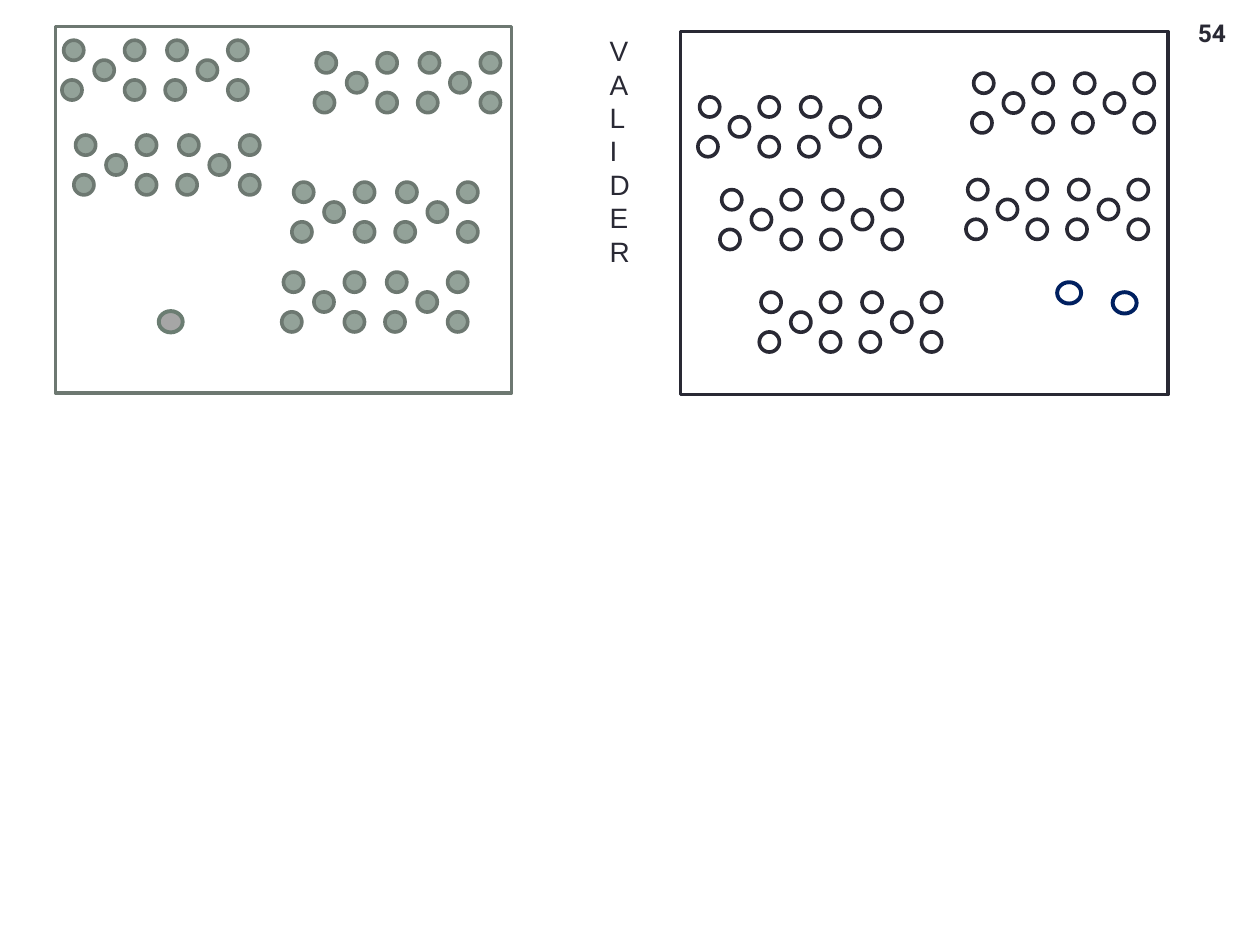
from dataclasses import dataclass

from pptx import Presentation
from pptx.dml.color import RGBColor
from pptx.enum.shapes import MSO_SHAPE as Preset
from pptx.enum.text import MSO_ANCHOR as Anchor, PP_ALIGN as Align
from pptx.util import Pt


@dataclass(frozen=True)
class Theme:
    ink: str = "292934"
    sage: str = "93A299"
    sage_edge: str = "6D7871"
    loose_edge: str = "6B7D72"
    grey: str = "A6A6A6"
    white: str = "FFFFFF"
    navy: str = "002060"
    body_font: str = "Arial"
    number_font: str = "Roboto"
    body_size: float = 16
    number_size: float = 14
    edge: float = 2.08
    loose_line: float = 2.25


THEME = Theme()
WORD_LINES = ["V", "A", "L", "I", "D", "ER"]
NUMBER = "54"

# Each dozen position is the top left dot of a ten: two fives side by side.
PANELS = [
    dict(frame=(31.7, 15.1, 260.6, 209.5), fill=THEME.sage, line=THEME.sage_edge,
         span=34.8, half=59,
         tens=[(36.4, 23), (180.7, 30.2), (43.2, 77.2), (167.8, 104.1), (162, 155.5)]),
    dict(frame=(388.8, 18, 278.6, 207.4), fill=THEME.white, line=THEME.ink,
         span=34, half=57.7,
         tens=[(399.8, 55.4), (556.4, 41.8), (412.4, 108.4), (553, 102.6), (434.9, 167)]),
]
LOOSE_UNITS = [
    ((90.7, 177.8), THEME.grey, THEME.loose_edge),
    ((604.1, 161.3), None, THEME.navy),
    ((635.8, 167), None, THEME.navy),
]
DOT = 11.5
ROW_STEP = 22.7
LEAN = 1  # the lower left dot of a five sits slightly outside
UNIT_SIZE = (13.7, 12.2)


def add_outlined(shapes, preset, place, fill, line, width):
    shape = shapes.add_shape(preset, *map(Pt, place))
    shape.shadow.inherit = False
    if fill:
        shape.fill.solid()
        shape.fill.fore_color.rgb = RGBColor.from_string(fill)
    else:
        shape.fill.background()
    shape.line.color.rgb = RGBColor.from_string(line)
    shape.line.width = Pt(width)


def add_ten(page, left, top, panel):
    span, half = panel["span"], panel["half"]
    five = [(0, 0), (span, 0), (span, ROW_STEP),
            (span / 2, ROW_STEP / 2), (-LEAN, ROW_STEP)]
    group = page.shapes.add_group_shape()
    for shift in (0, half):
        for x, y in five:
            add_outlined(group.shapes, Preset.OVAL,
                         (left + shift + x, top + y, DOT, DOT),
                         panel["fill"], panel["line"], THEME.edge)


def add_text(page, lines, place, *, font, size, bold=False,
             align=Align.LEFT, anchor=Anchor.TOP, spacing=None):
    frame = page.shapes.add_textbox(*map(Pt, place)).text_frame
    frame.word_wrap = True
    frame.vertical_anchor = anchor
    for index, line in enumerate(lines):
        para = frame.add_paragraph() if index else frame.paragraphs[0]
        para.alignment = align
        if spacing:
            para.line_spacing = Pt(spacing)
        span = para.add_run()
        span.text = line
        span.font.name = font
        span.font.size = Pt(size)
        span.font.bold = bold
        span.font.color.rgb = RGBColor.from_string(THEME.ink)


def main():
    deck = Presentation()
    deck.slide_width, deck.slide_height = Pt(720), Pt(540)
    page = deck.slides.add_slide(deck.slide_layouts[6])

    for panel in PANELS:
        add_outlined(page.shapes, Preset.RECTANGLE, panel["frame"],
                     None, panel["line"], THEME.edge)
        for left, top in panel["tens"]:
            add_ten(page, left, top, panel)
    for corner, fill, line in LOOSE_UNITS:
        add_outlined(page.shapes, Preset.OVAL, corner + UNIT_SIZE,
                     fill, line, THEME.loose_line)

    add_text(page, WORD_LINES, (341.3, 15.8, 30.2, 143.3),
             font=THEME.body_font, size=THEME.body_size, spacing=19.1)
    add_text(page, [NUMBER], (623.5, 5.8, 84.2, 25.9), font=THEME.number_font,
             size=THEME.number_size, bold=True, align=Align.RIGHT,
             anchor=Anchor.MIDDLE)
    deck.save("out.pptx")


if __name__ == "__main__":
    main()
